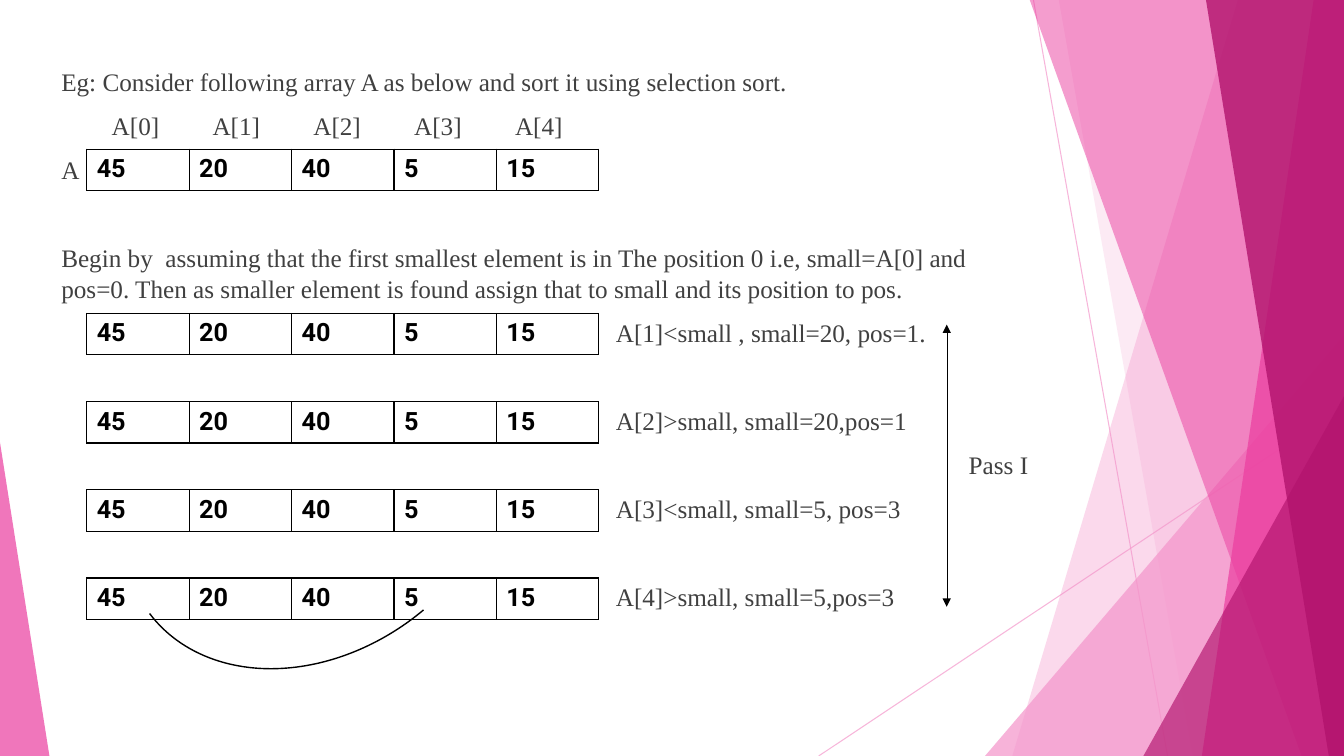
"""Builds a slide that walks through the first pass of selection sort."""
from lxml.etree import SubElement
from pptx import Presentation
from pptx.dml.color import RGBColor
from pptx.enum.shapes import MSO_CONNECTOR as Connector, MSO_SHAPE as Shape
from pptx.enum.text import MSO_ANCHOR as Anchor, PP_ALIGN as Align
from pptx.oxml.ns import qn
from pptx.util import Inches, Pt

COLORS = {"text": "404040", "black": "000000", "white": "FFFFFF",
          "light": "F496CB", "pink": "EB3D9F", "dark": "B2136D"}
LINE_HEIGHT = 22
PARAGRAPH_GAP = 9.5
SKIPPED_LINE = LINE_HEIGHT + 2 * PARAGRAPH_GAP
NOTE_INDENT = 5.5
ARRAY = ["45", "20", "40", "5", "15"]


class SlideBuilder:
    """Holds the style and the current slide."""

    def __init__(self, slide):
        self.slide = slide
        self.body_font = "Times New Roman"
        self.table_font = "Roboto"
        self.size = Pt(18)

    def color(self, name):
        return RGBColor.from_string(COLORS[name])

    def set_alpha(self, element, percent):
        for color in element.iter(qn("a:srgbClr")):
            SubElement(color, qn("a:alpha"), val=str(percent * 1000))

    def fill(self, shape, color, alpha):
        shape.shadow.inherit = False
        shape.fill.solid()
        shape.fill.fore_color.rgb = self.color(color)
        shape.line.fill.background()
        self.set_alpha(shape.fill._xPr, alpha)

    def band(self, top_x, bottom_x, color, alpha):
        right, top, bottom = 13.33, -0.01, 7.5
        corners = [(right, top), (right, bottom), (bottom_x, bottom)]
        builder = self.slide.shapes.build_freeform(Inches(top_x), Inches(top))
        builder.add_line_segments([(Inches(x), Inches(y)) for x, y in corners])
        self.fill(builder.convert_to_shape(), color, alpha)

    def triangle(self, left, top, width, height, peak, color, alpha):
        shape = self.slide.shapes.add_shape(
            Shape.ISOSCELES_TRIANGLE, Inches(left), Inches(top), Inches(width), Inches(height))
        shape.adjustments[0] = peak
        self.fill(shape, color, alpha)

    def line(self, start, end, color, width, alpha=100, arrows=False):
        connector = self.slide.shapes.add_connector(
            Connector.STRAIGHT, *(Inches(value) for value in (*start, *end)))
        connector.line.color.rgb = self.color(color)
        connector.line.width = Pt(width)
        properties = connector._element.spPr
        if alpha < 100:
            self.set_alpha(properties, alpha)
        if arrows:
            for tag in ("a:headEnd", "a:tailEnd"):
                SubElement(properties.find(qn("a:ln")), qn(tag), type="triangle")
        SubElement(properties, qn("a:effectLst"))

    def arc(self, left, top, width, height, start, rotation):
        shape = self.slide.shapes.add_shape(
            Shape.ARC, Inches(left), Inches(top), Inches(width), Inches(height))
        shape.adjustments[0] = start
        shape.adjustments[1] = 0
        shape.rotation = rotation
        shape.shadow.inherit = False
        shape.fill.background()
        shape.line.color.rgb = self.color("black")
        shape.line.width = Pt(1)

    def add_run(self, paragraph, text, font, color, bold=False):
        run = paragraph.add_run()
        run.text = text
        run.font.name = font
        run.font.size = self.size
        run.font.bold = bold
        run.font.color.rgb = self.color(color)

    def body(self, left, top, width, height, lines):
        frame = self.slide.shapes.add_textbox(
            Inches(left), Inches(top), Inches(width), Inches(height)).text_frame
        frame.word_wrap = True
        frame.vertical_anchor = Anchor.TOP
        for index, (text, indent, space_before) in enumerate(lines):
            paragraph = frame.add_paragraph() if index else frame.paragraphs[0]
            paragraph.alignment = Align.LEFT
            paragraph.line_spacing = Pt(LINE_HEIGHT)
            paragraph.space_before = Pt(space_before)
            properties = paragraph._p.get_or_add_pPr()
            properties.set("marL", str(Inches(indent)))
            properties.set("indent", "0")
            self.add_run(paragraph, text, self.body_font, "text")

    def array_table(self, top, values):
        column_width, row_height = 1.016, 0.41
        frame = self.slide.shapes.add_table(
            1, len(values), Inches(0.86), Inches(top),
            Inches(column_width * len(values)), Inches(row_height))
        table = frame.table
        table.first_row = table.horz_banding = False
        for column, value in enumerate(values):
            table.columns[column].width = Inches(column_width)
            cell = table.cell(0, column)
            properties = cell._tc.get_or_add_tcPr()
            for side in "LRTB":
                border = SubElement(properties, qn(f"a:ln{side}"), w=str(Pt(1)))
                solid = SubElement(border, qn("a:solidFill"))
                SubElement(solid, qn("a:srgbClr"), val=COLORS["black"])
            cell.fill.solid()
            cell.fill.fore_color.rgb = self.color("white")
            self.add_run(cell.text_frame.paragraphs[0], value, self.table_font, "black", bold=True)


def main():
    presentation = Presentation()
    presentation.slide_width = Inches(13.33)
    presentation.slide_height = Inches(7.5)
    builder = SlideBuilder(presentation.slides.add_slide(presentation.slide_layouts[6]))

    builder.line((10.25, 0), (11.58, 7.5), "light", 0.75, alpha=70)
    builder.line((13.33, 4.03), (8.12, 7.5), "light", 0.75, alpha=70)
    builder.band(12.28, 10.04, "light", 36)
    builder.band(10.5, 11.83, "light", 20)
    builder.triangle(9.77, 3.33, 3.56, 4.17, 1, "light", 72)
    builder.band(10.21, 12.91, "pink", 50)
    builder.band(13.03, 11.92, "pink", 70)
    builder.band(11.96, 13.18, "dark", 80)
    builder.triangle(11.34, 3.93, 1.99, 3.57, 1, "dark", 66)
    builder.triangle(0, 4.39, 0.49, 3.11, 0, "pink", 70)

    builder.body(0.51, 0.6, 9.87, 6.14, [
        ("Eg: Consider following array A as below and sort it using selection sort.", 0, 0),
        ("A", 0, SKIPPED_LINE),
        ("Begin by  assuming that the first smallest element is in The position 0 i.e, "
         "small=A[0] and pos=0. Then as smaller element is found assign that to small "
         "and its position to pos.", 0, SKIPPED_LINE),
        ("A[1]<small , small=20, pos=1.", NOTE_INDENT, PARAGRAPH_GAP),
        ("A[2]>small, small=20,pos=1", NOTE_INDENT, SKIPPED_LINE),
        ("Pass I", 9, PARAGRAPH_GAP),
        ("A[3]<small, small=5, pos=3", NOTE_INDENT, PARAGRAPH_GAP),
        ("A[4]>small, small=5,pos=3", NOTE_INDENT, SKIPPED_LINE),
    ])
    for index in range(len(ARRAY)):
        builder.body(1.01 + index, 1.04, 0.9, 0.41, [(f"A[{index}]", 0, 0)])

    builder.array_table(1.48, ARRAY)
    for step in range(4):
        builder.array_table(3.11 + 0.875 * step, ARRAY)

    builder.line((9.39, 3.22), (9.39, 6.02), "black", 0.25, arrows=True)
    builder.arc(1.07, 3.24, 4.11, 3.22, start=159.09, rotation=143)
    presentation.save("out.pptx")


if __name__ == "__main__":
    main()
